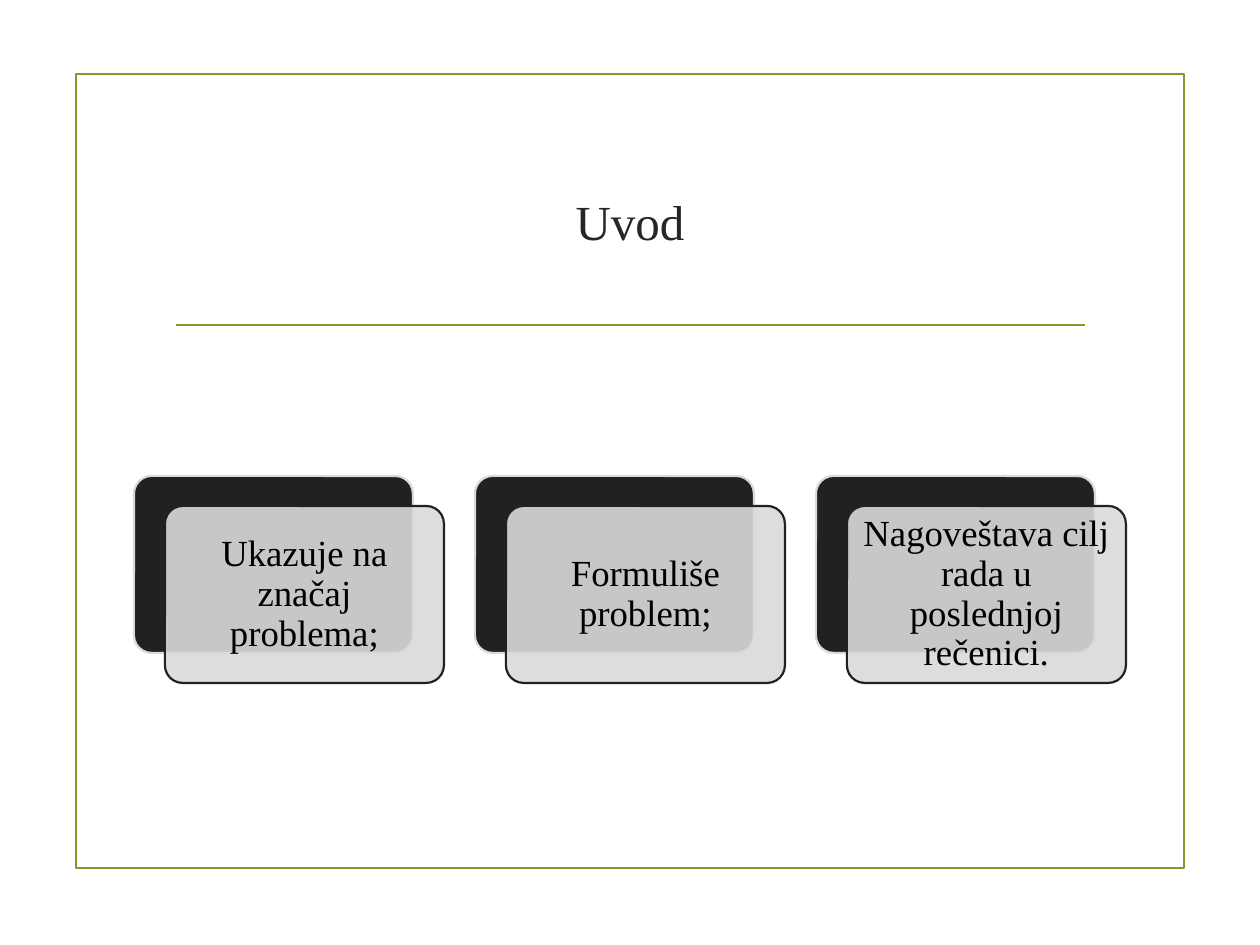
from lxml import etree
from pptx import Presentation, util as u
from pptx.dml.color import RGBColor
from pptx.enum import shapes, text
from pptx.oxml.ns import qn

PX = 914400 // 126
COLORS = {"accent": "83992A", "dark": "212121", "light": "DADADA",
          "title": "262626", "body": "000000"}
CARDS = ["Ukazuje na značaj problema;", "Formuliše problem;",
         "Nagoveštava cilj rada u poslednjoj rečenici."]
CARD_SIZE = (279, 177)
CARD_LEFT, CARD_TOP, CARD_PITCH = 134, 476, 341
CARD_SHIFT = (31, 30)


def px(*values):
    return [u.Emu(v * PX) for v in values]


def rgb(name):
    return RGBColor.from_string(COLORS[name])


def set_line(line, color):
    line.color.rgb = rgb(color)
    line.width = u.Pt(1.25)


def add_box(s, kind, box, line, fill=None, alpha=None):
    sp = s.shapes.add_shape(kind, *px(*box))
    sp.shadow.inherit = False
    set_line(sp.line, line)
    if fill is None:
        sp.fill.background()
    else:
        sp.fill.solid()
        sp.fill.fore_color.rgb = rgb(fill)
    if alpha is not None:
        clr = sp.fill._xPr.find(qn("a:solidFill"))[0]
        etree.SubElement(clr, qn("a:alpha"), val=str(alpha * 1000))
    return sp


def add_rule(s, x1, y1, x2, y2, color):
    c = s.shapes.add_connector(shapes.MSO_CONNECTOR.STRAIGHT, *px(x1, y1, x2, y2))
    set_line(c.line, color)
    etree.SubElement(c._element.spPr, qn("a:effectLst"))


def set_text(sp, words, size, color, inset):
    tf = sp.text_frame
    margin = px(inset)[0]
    frame = {"word_wrap": True, "vertical_anchor": text.MSO_ANCHOR.MIDDLE,
             "margin_left": margin, "margin_right": margin,
             "margin_top": margin, "margin_bottom": margin}
    for name, value in frame.items():
        setattr(tf, name, value)
    p = tf.paragraphs[0]
    p.alignment = text.PP_ALIGN.CENTER
    p.line_spacing = 0.9
    r = p.add_run()
    r.text = words
    for name, value in {"name": "Times New Roman", "size": u.Pt(size)}.items():
        setattr(r.font, name, value)
    r.font.color.rgb = rgb(color)


def add_card(s, left, words):
    rounded = shapes.MSO_SHAPE.ROUNDED_RECTANGLE
    dx, dy = CARD_SHIFT
    back = add_box(s, rounded, (left, CARD_TOP, *CARD_SIZE), "light", "dark")
    front = add_box(s, rounded, (left + dx, CARD_TOP + dy, *CARD_SIZE),
                    "dark", "light", 90)
    for sp in (back, front):
        sp.adjustments[0] = 0.1
    set_text(front, words, 21, "body", 11)


def main():
    prs = Presentation()
    prs.slide_width, prs.slide_height = u.Inches(10), u.Inches(7.5)
    s = prs.slides.add_slide(prs.slide_layouts[6])
    add_box(s, shapes.MSO_SHAPE.RECTANGLE, (76, 74, 1108, 794), "accent")
    add_rule(s, 176, 325, 1085, 325, "accent")
    title = s.shapes.add_textbox(*px(134, 135, 992, 180))
    set_text(title, "Uvod", 28, "title", 6)
    for i, words in enumerate(CARDS):
        add_card(s, CARD_LEFT + i * CARD_PITCH, words)
    prs.save("out.pptx")


if __name__ == "__main__":
    main()
